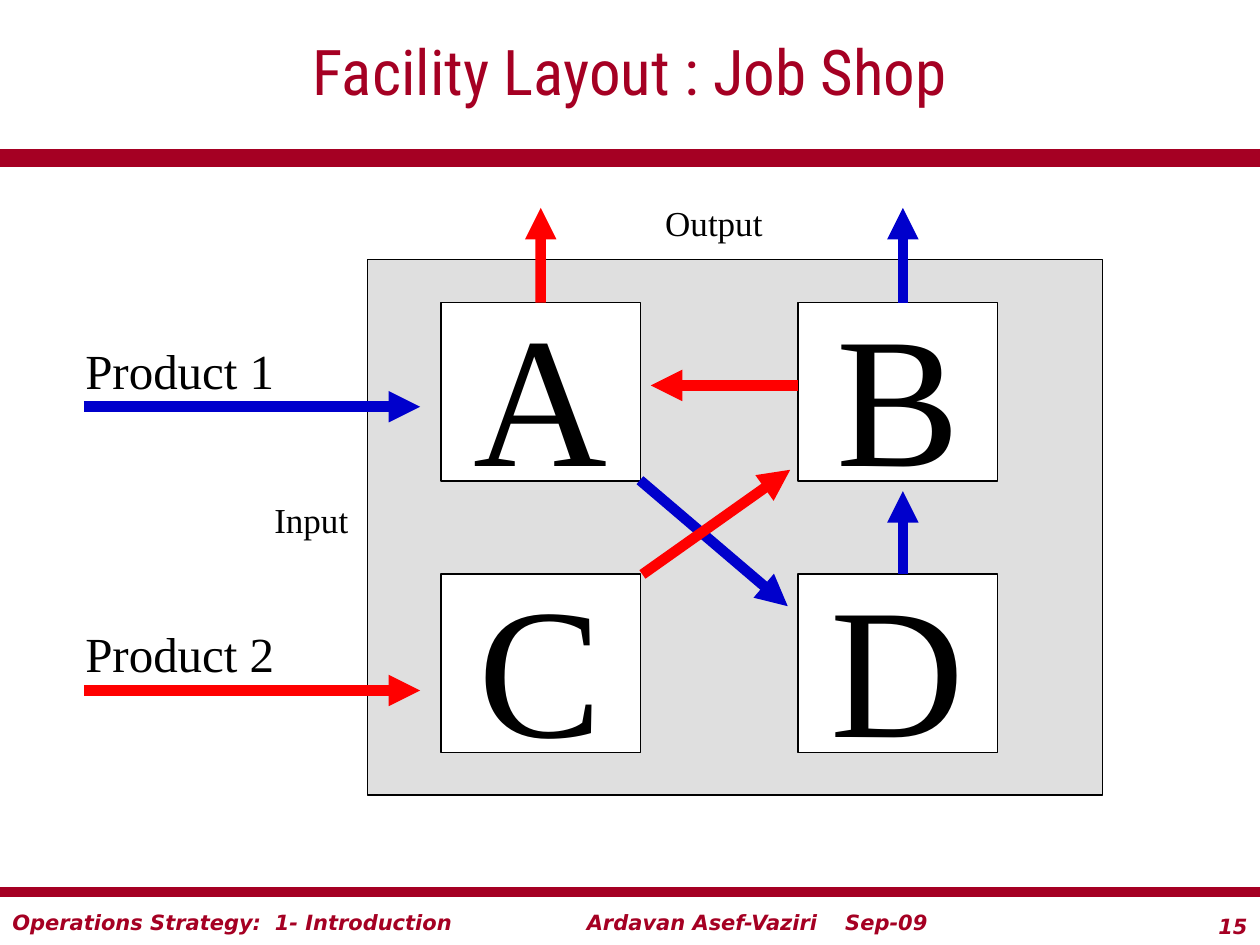
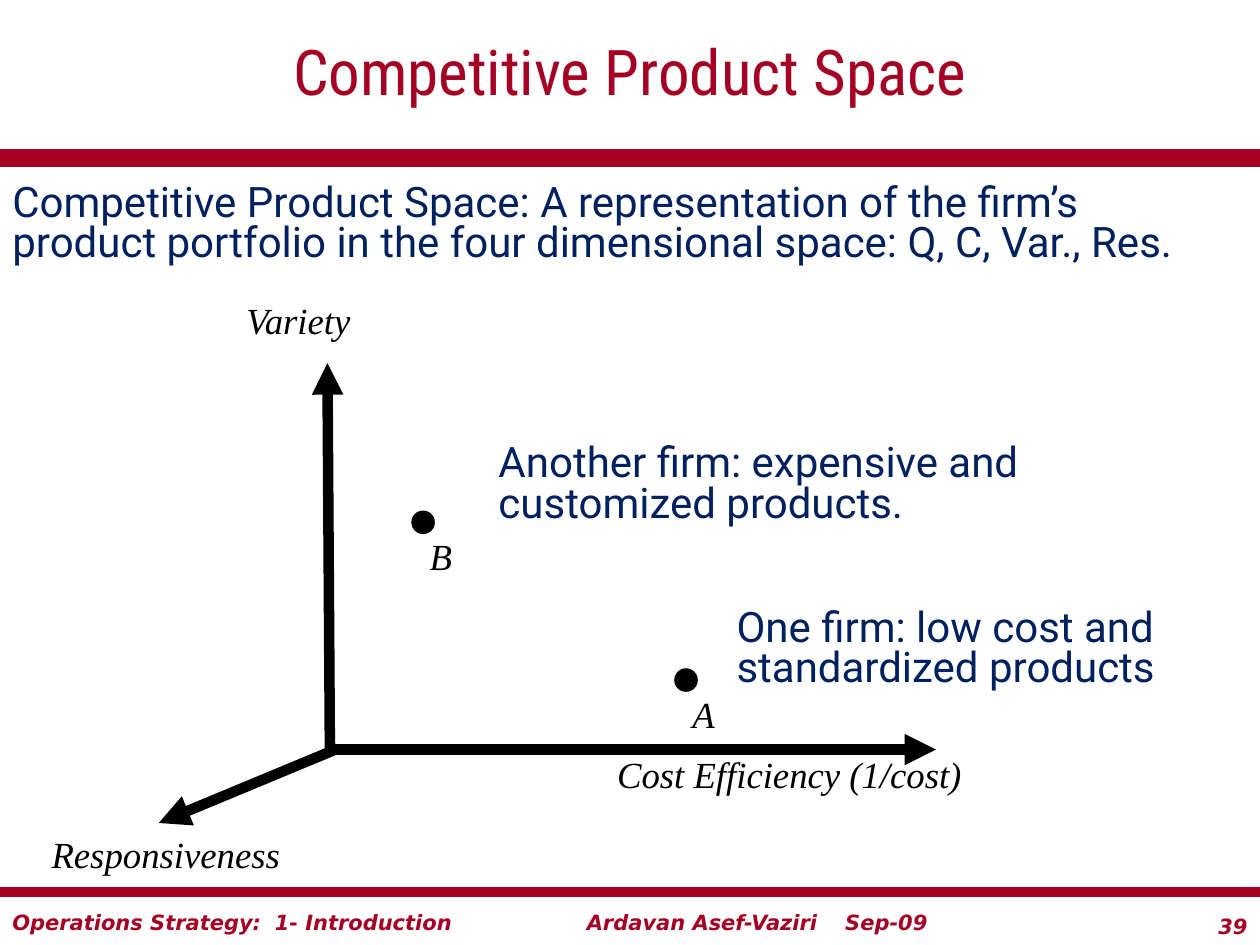
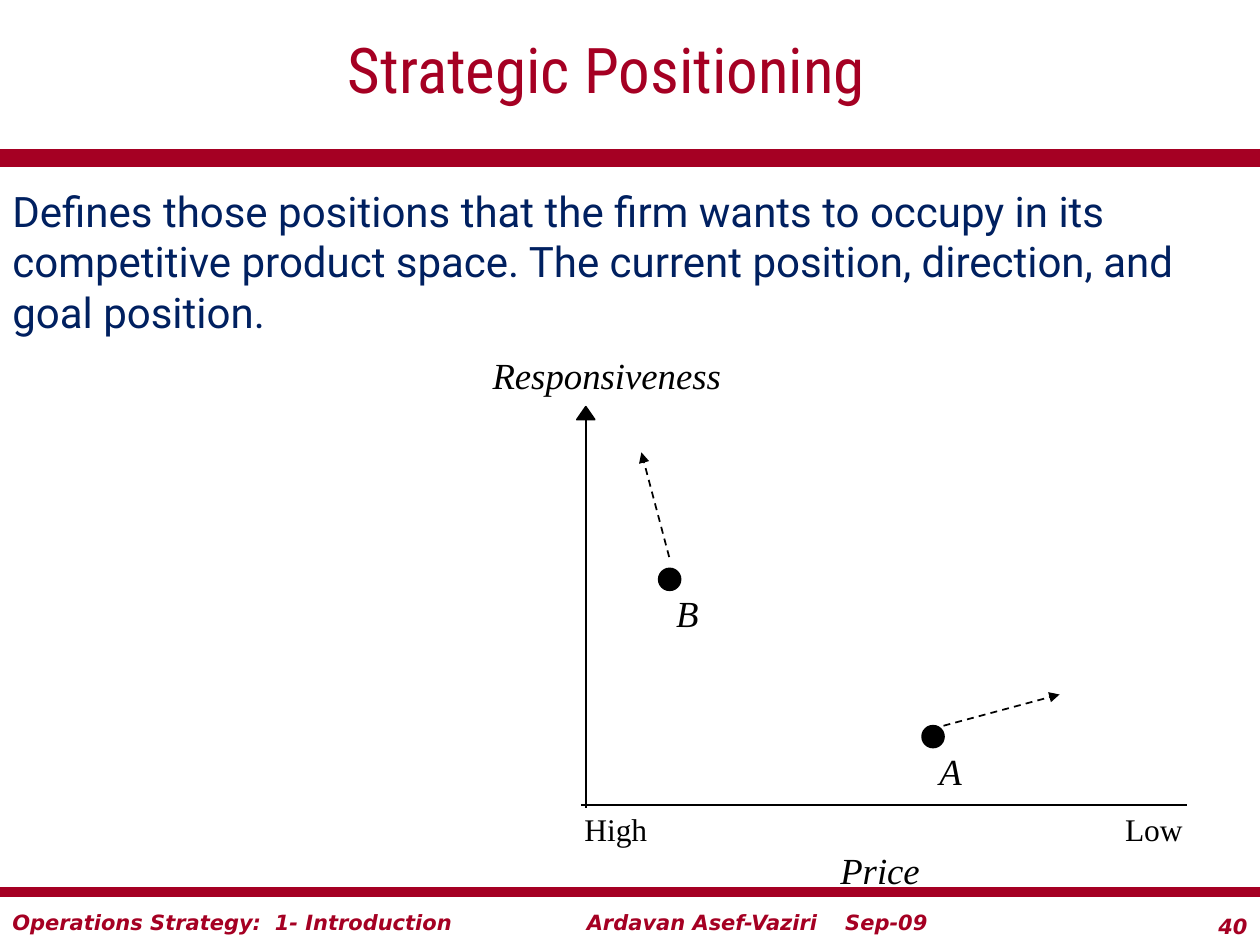
"""Build three operations strategy slides: job shop, product space and positioning."""
from lxml import etree
from pptx import Presentation
from pptx.dml.color import RGBColor
from pptx.enum.dml import MSO_LINE
from pptx.enum.shapes import MSO_CONNECTOR, MSO_SHAPE
from pptx.enum.text import MSO_ANCHOR, PP_ALIGN
from pptx.oxml.ns import qn
from pptx.util import Cm, Pt

RECT, OVAL = MSO_SHAPE.RECTANGLE, MSO_SHAPE.OVAL
LEFT, MID, RIGHT = PP_ALIGN.LEFT, PP_ALIGN.CENTER, PP_ALIGN.RIGHT
STRAIGHT, DASH = MSO_CONNECTOR.STRAIGHT, MSO_LINE.DASH
CENTER = MSO_ANCHOR.MIDDLE

COLORS = {"brand": "A50023", "navy": "002060", "black": "000000", "white": "FFFFFF",
          "gray": "DFDFDF", "blue": "0000CC", "red": "FF0000"}
WIDE, HIGH = 25.4, 19.05
SERIF = "Times New Roman"

BANDS = [(3.18, 10), (17.98, 6)]
FOOTERS = [("Operations Strategy:\t1- Introduction", 0, 11.86, 5.29),
           ("Ardavan Asef-Vaziri\tSep-09", 11.58, 8.51, 5.21)]

HALL = (7.41, 5.23, 14.82, 10.8)
ROOMS = [("A", "B"), ("C", "D")]
ROOM = {"left": 8.89, "top": 6.1, "wide": 4.02, "high": 3.6, "across": 7.2, "down": 5.47}
GOODS = [("Product 1", "blue"), ("Product 2", "red")]
GOODS_STEP = 5.72
FLOWS = [
    ("blue", (12.9, 9.68), (15.88, 12.22)),
    ("blue", (18.2, 11.57), (18.2, 9.9)),
    ("blue", (18.2, 6.1), (18.2, 4.19)),
    ("red", (12.95, 11.58), (15.93, 9.47)),
    ("red", (16.09, 7.77), (13.12, 7.77)),
]
EXIT = ((10.9, 6.1), (10.9, 4.19))
SIDES = [("Output", (13.16, 3.94, 2.54, 1.09)), ("Input", (5.28, 9.93, 3.6, 1.09))]

SPACE_AXES = [((6.71, 15.11), (18.87, 15.11)), ((6.65, 15.11), (6.6, 7.32)),
              ((6.81, 15.09), (3.2, 16.59))]
SPACE_NAMES = [("Cost Efficiency (1/cost)", (12.19, 15.04, 7.49, 1.14)),
               ("Variety", (4.72, 5.87, 2.69, 1.14)),
               ("Responsiveness", (0.79, 16.64, 5.13, 1.14))]
SPACE_FIRMS = [("B", 8.31, 10.31), ("A", 13.61, 13.49)]
SPACE_NOTES = [
    ("Competitive Product Space: A representation of the firm’s product portfolio "
     "in the four dimensional space: Q, C, Var., Res.", (0, 3.61, 24.08, 2.54)),
    ("One firm: low cost and standardized products", (14.6, 12.17, 10.8, 2.41)),
    ("Another firm: expensive and customized products.", (9.8, 8.86, 13.11, 2.11)),
]

GOAL_TEXT = ("Defines those positions that the firm wants to occupy in its competitive "
             "product space. The current position, direction, and goal position.")
GOAL_AXES = [((11.71, 16.23), (23.93, 16.23)), ((11.81, 16.28), (11.81, 8.38))]
GOAL_TIP = [(11.63, 8.46), (11.99, 8.46), (11.81, 8.2)]
GOAL_NAMES = [("Price", (16.69, 16.97, 2.11, 1.14)),
              ("Responsiveness", (9.68, 6.99, 5.13, 1.14))]
GOAL_ENDS = [("High", (11.53, 16.21, 1.78, 1.02)), ("Low", (22.43, 16.21, 1.68, 1.02))]
GOAL_FIRMS = [("B", 13.28, 11.46), ("A", 18.59, 14.63)]
GOAL_MOVES = [((13.49, 11.23), (12.93, 9.12)), ((19.02, 14.63), (21.36, 14.0))]


def color(name):
    return RGBColor.from_string(COLORS[name])


def style(shape, text, size, font=SERIF, tint="black", align=LEFT, wrap=True,
          bold=False, slant=False, gap=None, tab=None):
    frame = shape.text_frame
    frame.word_wrap = wrap
    frame.text = text
    para = frame.paragraphs[0]
    para.alignment = align
    if gap:
        para.line_spacing = gap
    if tab:
        tabs = etree.SubElement(para._p.get_or_add_pPr(), qn("a:tabLst"))
        etree.SubElement(tabs, qn("a:tab"), pos=str(Cm(tab)), algn="l")
    for run in para.runs:
        run.font.size, run.font.name = Pt(size), font
        run.font.bold, run.font.italic = bold, slant
        run.font.color.rgb = color(tint)
    return frame


def write(slide, text, box, size, **look):
    shape = slide.shapes.add_textbox(*map(Cm, box))
    return style(shape, text, size, **look)


def paint(shape, fill, width):
    shape.shadow.inherit = False
    shape.fill.solid()
    shape.fill.fore_color.rgb = color(fill)
    shape.line.color.rgb = color("black")
    shape.line.width = Pt(width)
    return shape


def draw(slide, kind, box, fill, width):
    return paint(slide.shapes.add_shape(kind, *map(Cm, box)), fill, width)


def link(slide, start, end, tint="black", width=6, head=True, dash=None):
    line = slide.shapes.add_connector(STRAIGHT, *map(Cm, start + end))
    line.line.color.rgb = color(tint)
    line.line.width = Pt(width)
    if dash:
        line.line.dash_style = dash
    if head:
        etree.SubElement(line.line._get_or_add_ln(), qn("a:tailEnd"), type="triangle")
    etree.SubElement(line._element.spPr, qn("a:effectLst"))
    return line


def begin(deck, title, page, box=(0, 0, WIDE, 2.82)):
    slide = deck.slides.add_slide(deck.slide_layouts[6])
    foot = {"font": "DejaVu Sans", "tint": "brand", "bold": True, "slant": True}
    write(slide, str(page), (23.5, 18.29, 1.9, 0.76), 12, align=RIGHT, **foot)
    for text, left, wide, tab in FOOTERS:
        write(slide, text, (left, 18.21, wide, 0.76), 12, tab=tab, **foot)
    for top, width in BANDS:
        link(slide, (0, top), (WIDE, top), "brand", width, head=False)
    frame = write(slide, title, box, 36, font="Roboto Condensed", tint="brand", align=MID)
    frame.vertical_anchor = CENTER
    return slide


def label(slide, names):
    for text, box in names:
        write(slide, text, box, 21, wrap=False, slant=True)


def plot(slide, firms):
    for name, left, top in firms:
        label(slide, [(name, (left + 0.1, top + 0.33, 0.97, 1.14))])
        draw(slide, OVAL, (left, top, 0.44, 0.44), "black", 1)


def job_shop(deck):
    slide = begin(deck, "Facility Layout : Job Shop", 15)
    draw(slide, RECT, HALL, "gray", 0.75)
    rooms = {}
    for row, names in enumerate(ROOMS):
        for col, name in enumerate(names):
            box = (ROOM["left"] + col * ROOM["across"], ROOM["top"] + row * ROOM["down"],
                   ROOM["wide"], ROOM["high"])
            rooms[name] = draw(slide, RECT, box, "white", 0.75)
            frame = style(rooms[name], name, 106, align=MID, wrap=False)
            frame.vertical_anchor = CENTER
    for row, (name, tint) in enumerate(GOODS):
        drop = row * GOODS_STEP
        write(slide, name, (1.47, 6.73 + drop, 6.55, 1.45), 28)
        link(slide, (1.69, 8.2 + drop), (8.47, 8.2 + drop), tint)
    for tint, start, end in FLOWS:
        link(slide, start, end, tint)
    link(slide, *EXIT, "red").begin_connect(rooms["A"], 0)
    for text, box in SIDES:
        write(slide, text, box, 20)


def product_space(deck):
    slide = begin(deck, "Competitive Product Space", 39)
    for start, end in SPACE_AXES:
        link(slide, start, end)
    label(slide, SPACE_NAMES)
    plot(slide, SPACE_FIRMS)
    for text, box in SPACE_NOTES:
        write(slide, text, box, 24, font="Roboto", tint="navy", gap=0.8)


def positioning(deck):
    slide = begin(deck, "Strategic Positioning", 40, (0, 0, 24.46, 2.74))
    write(slide, GOAL_TEXT, (0, 3.61, 24.61, 3.91), 24, font="Roboto", tint="navy")
    for start, end in GOAL_AXES:
        link(slide, start, end, width=1, head=False)
    first, *rest = [tuple(map(Cm, spot)) for spot in GOAL_TIP]
    tip = slide.shapes.build_freeform(*first)
    tip.add_line_segments(rest, close=True)
    paint(tip.convert_to_shape(), "black", 1)
    label(slide, GOAL_NAMES)
    plot(slide, GOAL_FIRMS)
    for start, end in GOAL_MOVES:
        link(slide, start, end, width=1, dash=DASH)
    for text, box in GOAL_ENDS:
        write(slide, text, box, 18, wrap=False)


def main():
    deck = Presentation()
    deck.slide_width, deck.slide_height = Cm(WIDE), Cm(HIGH)
    job_shop(deck)
    product_space(deck)
    positioning(deck)
    deck.save("out.pptx")


if __name__ == "__main__":
    main()
